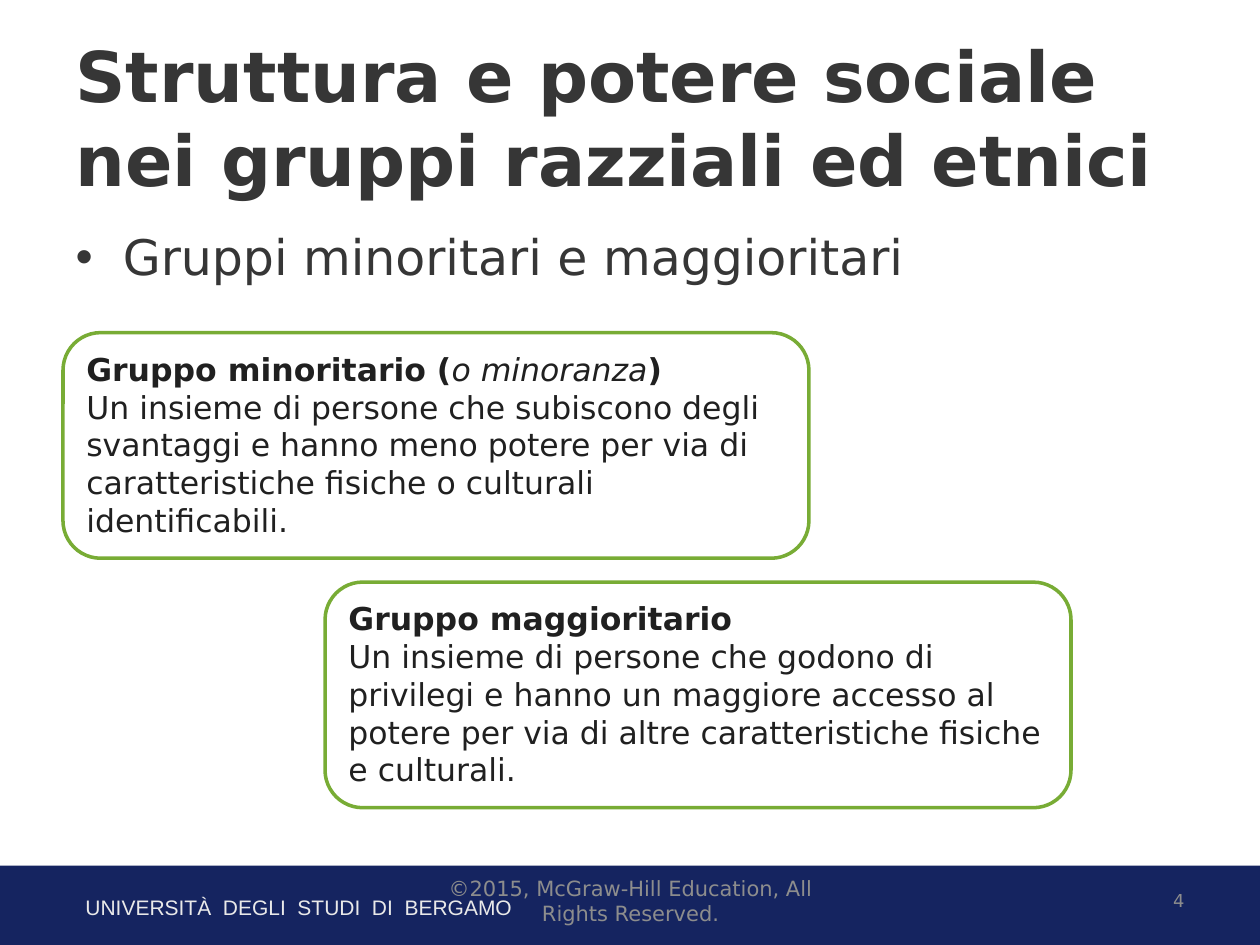
"""Builds the slide on minority and majority groups."""
from lxml import etree
from pptx import Presentation
from pptx import util as u
from pptx.dml.color import RGBColor
from pptx.enum import shapes, text
from pptx.oxml.ns import qn

FONT = "DejaVu Sans"
NAVY, GREEN, WHITE = "152460", "78AC35", "FFFFFF"
DARK, INK, GREY, PALE = "363636", "202020", "8D8D8D", "E9E9E9"


def colour(value):
    """Turn a hex string into a colour."""
    return RGBColor.from_string(value)


def place(shape, left, top, width, height):
    """Move and size a shape, given inches."""
    shape.left, shape.top = u.Inches(left), u.Inches(top)
    shape.width, shape.height = u.Inches(width), u.Inches(height)


def style(item, size, tint, bold=False, italic=False, name=FONT):
    """Format the font of a run or paragraph."""
    font = item.font
    font.name, font.size = name, u.Pt(size)
    font.bold, font.italic = bold, italic
    font.color.rgb = colour(tint)


def fill_frame(frame, words, size, tint, align=text.PP_ALIGN.LEFT,
               anchor=text.MSO_ANCHOR.TOP, bold=False, name=FONT):
    """Write one formatted paragraph into a text frame."""
    frame.text = words
    frame.word_wrap = True
    frame.auto_size = text.MSO_AUTO_SIZE.NONE
    frame.vertical_anchor = anchor
    para = frame.paragraphs[0]
    para.alignment = align
    para.space_before = u.Pt(0)
    for span in para.runs:
        style(span, size, tint, bold, name=name)


def add_bullet(para, tint, percent, indent):
    """Give a paragraph a coloured hanging bullet."""
    props = para._p.get_or_add_pPr()
    props.set("marL", str(u.Inches(indent)))
    props.set("indent", str(-u.Inches(indent)))
    bullet_colour = etree.SubElement(props, qn("a:buClr"))
    etree.SubElement(bullet_colour, qn("a:srgbClr"), val=tint)
    etree.SubElement(props, qn("a:buSzPct"), val=str(percent * 1000))
    etree.SubElement(props, qn("a:buFont"), typeface="Arial")
    etree.SubElement(props, qn("a:buChar"), char="•")


def add_label(page, place_at, words, size, tint, **options):
    """Add a text box with one line of small text."""
    box = page.shapes.add_textbox(*map(u.Inches, place_at))
    fill_frame(box.text_frame, words, size, tint, **options)


def add_band(page):
    """Add the dark band along the foot of the slide."""
    band = page.shapes.add_shape(shapes.MSO_SHAPE.RECTANGLE,
                                 *map(u.Inches, (0, 6.87, 10, 0.68)))
    band.shadow.inherit = False
    band.fill.solid()
    band.fill.fore_color.rgb = colour(NAVY)
    band.line.fill.background()


def add_definition(page, left, top, heading, meaning):
    """Add a rounded card with a heading of (words, bold, italic) and a meaning."""
    card = page.shapes.add_shape(shapes.MSO_SHAPE.ROUNDED_RECTANGLE,
                                 *map(u.Inches, (left, top, 5.92, 1.79)))
    card.shadow.inherit = False
    card.fill.solid()
    card.fill.fore_color.rgb = colour(WHITE)
    card.line.color.rgb = colour(GREEN)
    card.line.width = u.Pt(2)
    frame = card.text_frame
    frame.word_wrap = True
    frame.auto_size = text.MSO_AUTO_SIZE.SHAPE_TO_FIT_TEXT
    frame.vertical_anchor = text.MSO_ANCHOR.TOP
    lines = [heading, [(meaning, False, False)]]
    for index, parts in enumerate(lines):
        para = frame.add_paragraph() if index else frame.paragraphs[0]
        para.alignment = text.PP_ALIGN.LEFT
        for words, bold, italic in parts:
            span = para.add_run()
            span.text = words
            style(span, 18, INK, bold, italic)


def main():
    """Build and save the slide."""
    deck = Presentation()
    deck.slide_width, deck.slide_height = u.Inches(10), u.Inches(7.5)
    page = deck.slides.add_slide(deck.slide_layouts[1])
    title, body = page.placeholders
    middle = text.MSO_ANCHOR.MIDDLE

    place(title, 0.5, 0.3, 9, 1.25)
    fill_frame(title.text_frame,
               "Struttura e potere sociale nei gruppi razziali ed etnici",
               40, DARK, anchor=middle, bold=True)

    place(body, 0.5, 1.75, 9, 4.95)
    add_bullet(body.text_frame.paragraphs[0], NAVY, 122, 0.38)
    fill_frame(body.text_frame, "Gruppi minoritari e maggioritari", 28, DARK)

    add_band(page)
    add_label(page, (0.58, 7.05, 5.82, 0.3),
              "UNIVERSITÀ  DEGLI  STUDI  DI  BERGAMO", 12, PALE, name="Arial")
    add_label(page, (7.17, 6.95, 2.33, 0.4), "4", 10.2, GREY,
              align=text.PP_ALIGN.RIGHT, anchor=middle)

    add_definition(
        page, 0.5, 2.64,
        [("Gruppo minoritario (", True, False), ("o minoranza", False, True),
         (")", True, False)],
        "Un insieme di persone che subiscono degli svantaggi e hanno meno potere "
        "per via di caratteristiche fisiche o culturali identificabili.")
    add_definition(
        page, 2.58, 4.62,
        [("Gruppo maggioritario", True, False)],
        "Un insieme di persone che godono di privilegi e hanno un maggiore accesso "
        "al potere per via di altre caratteristiche fisiche e culturali.")

    add_label(page, (3.42, 6.95, 3.17, 0.4),
              "©2015, McGraw-Hill Education, All Rights Reserved.", 12, GREY,
              align=text.PP_ALIGN.CENTER, anchor=middle)
    deck.save("out.pptx")


if __name__ == "__main__":
    main()
